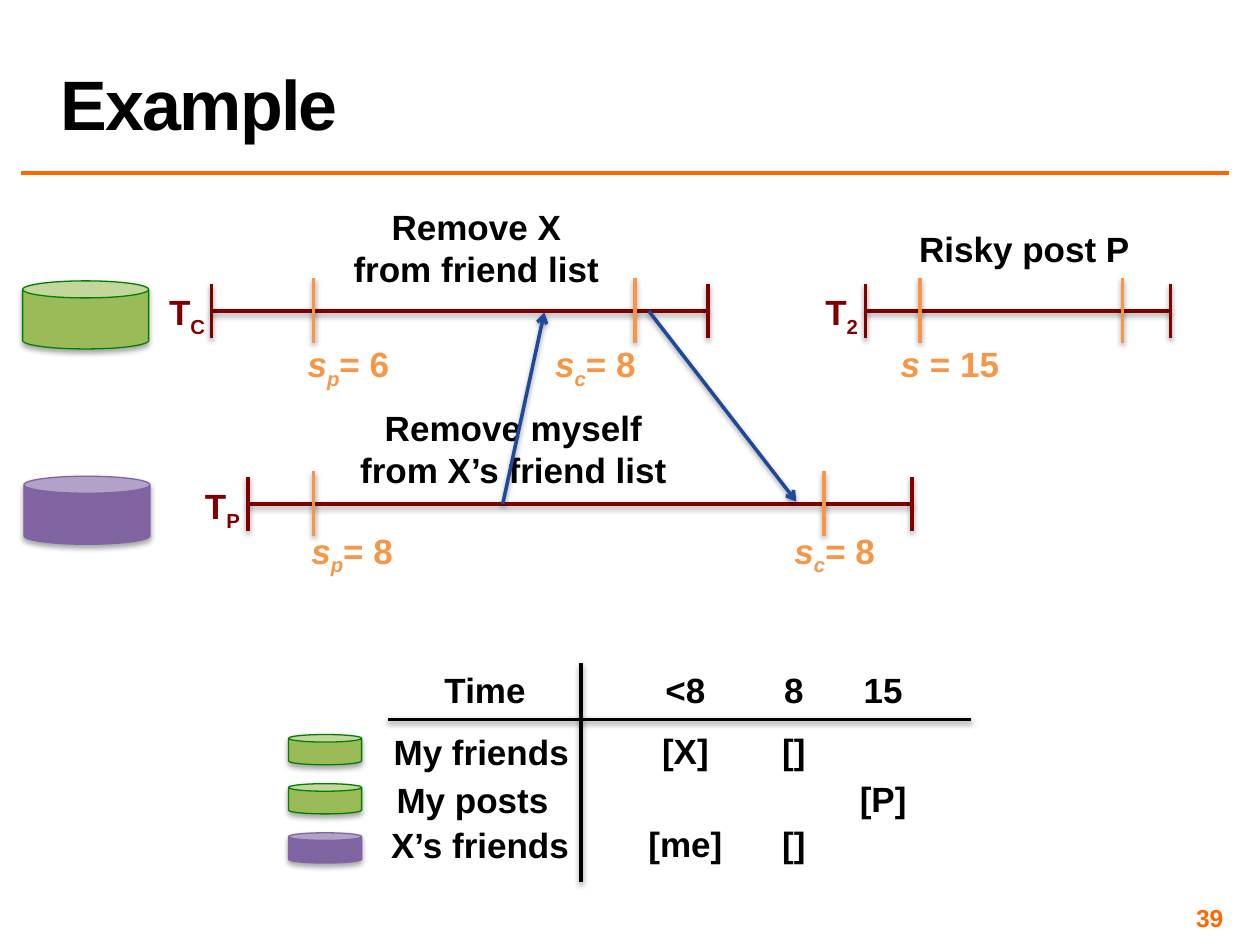
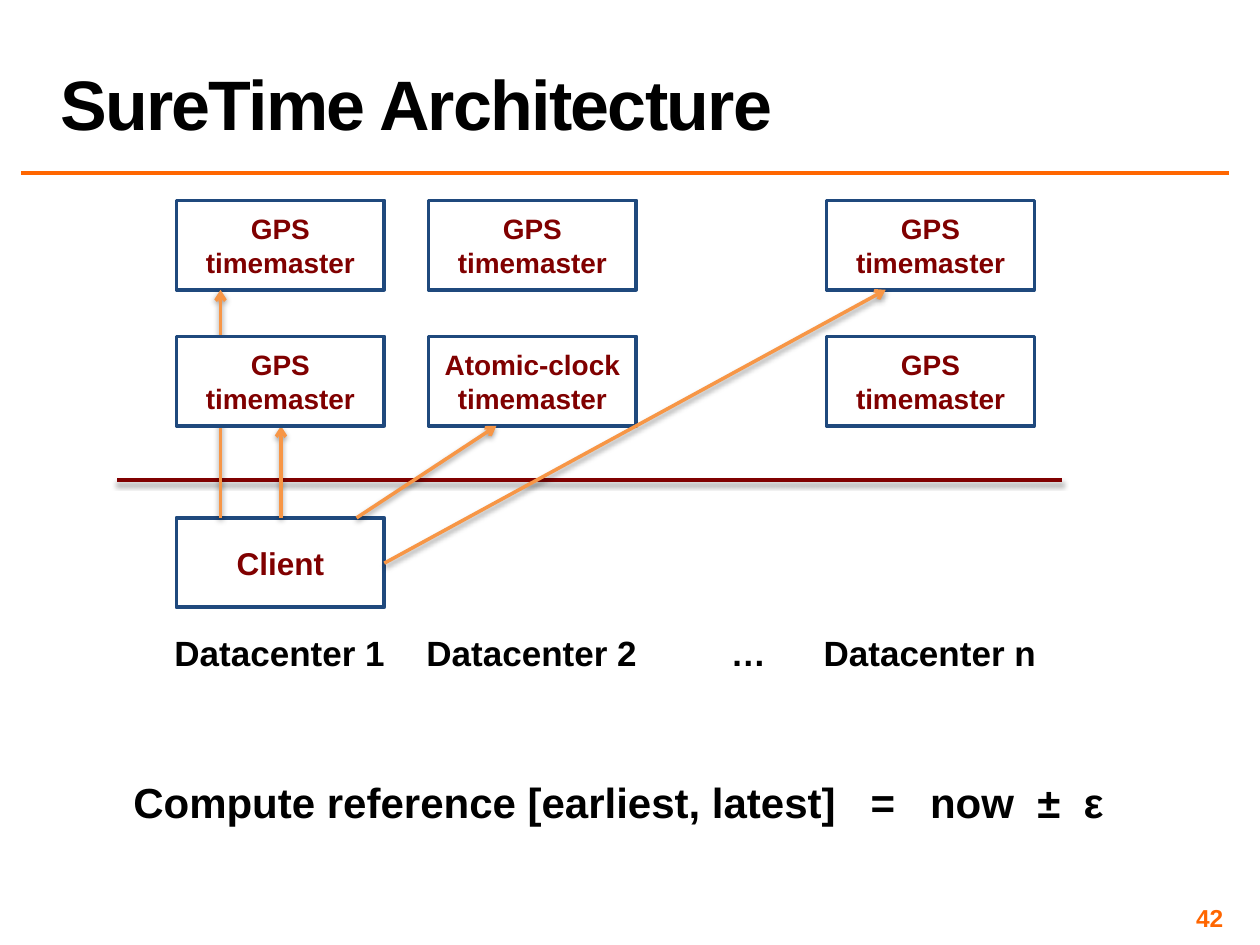
import pptx
import pptx.util
import pptx.dml.color
import pptx.enum.shapes
import pptx.enum.text
import pptx.oxml
import pptx.oxml.ns

ORANGE, AMBER, MAROON, BLACK = "FF6600", "F79646", "800000", "000000"
BLUE, NAVY, WHITE = "1E4899", "1F497D", "FFFFFF"
GREEN, EDGE, PURPLE = "9BBB59", "008000", "8064A2"
SHAPE = pptx.enum.shapes.MSO_SHAPE
ALIGN = pptx.enum.text.PP_ALIGN
ANCHOR = pptx.enum.text.MSO_ANCHOR


def grid(n):
    """Length of n cells; the slide is 100 columns by 75 rows."""
    return pptx.util.Inches(n / 10)


def color(code):
    return pptx.dml.color.RGBColor.from_string(code)


def xml(tag, inner="", **attrs):
    space = pptx.oxml.ns.nsdecls("a")
    pairs = " ".join(f'{key}="{val}"' for key, val in attrs.items())
    return pptx.oxml.parse_xml(f"<a:{tag} {space} {pairs}>{inner}</a:{tag}>")


class Deck:
    font = "Arial"
    stroke = 2

    def __init__(self):
        self.show = pptx.Presentation()
        self.show.slide_width, self.show.slide_height = grid(100), grid(75)
        self.slide = None

    def start(self, title, number):
        self.slide = self.show.slides.add_slide(self.show.slide_layouts[5])
        self.line(1.7, 13.73, 97.5, 13.73, ORANGE, shade=False)
        head = self.slide.shapes.title
        head.left, head.top, head.width, head.height = map(
            grid, (3.8, 0.2, 93.7, 11.7))
        frame = head.text_frame
        frame.text = title
        frame.vertical_anchor = ANCHOR.BOTTOM
        para = frame.paragraphs[0]
        self.style(para, 40, BLACK, ALIGN.LEFT)
        para.line_spacing = 0.8
        para.font._element.set("spc", "-100")
        foot = self.text(74.2, 71.7, 23.3, number, 14, ORANGE, high=2.3)
        foot.vertical_anchor = ANCHOR.MIDDLE
        foot.margin_left = foot.margin_right = grid(0.4)
        foot.margin_top = foot.margin_bottom = grid(0.4)
        foot.paragraphs[0].alignment = ALIGN.RIGHT
        foot.word_wrap = True

    def style(self, para, size, tint, align=ALIGN.CENTER):
        para.alignment = align
        font = para.font
        font.name, font.size, font.bold = self.font, pptx.util.Pt(size), True
        font.color.rgb = color(tint)

    def shade(self, shape, blur, dist, alpha):
        tone = f'<a:srgbClr val="000000"><a:alpha val="{alpha}"/></a:srgbClr>'
        cast = (f'<a:outerShdw blurRad="{blur}" dist="{dist}" dir="5400000" '
                f'rotWithShape="0">{tone}</a:outerShdw>')
        shape._element.spPr.append(xml("effectLst", cast))

    def line(self, x1, y1, x2, y2, tint, arrow=False, shade=True):
        link = self.slide.shapes.add_connector(
            pptx.enum.shapes.MSO_CONNECTOR.STRAIGHT,
            *map(grid, (x1, y1, x2, y2)))
        link.line.color.rgb = color(tint)
        link.line.width = pptx.util.Pt(self.stroke)
        if arrow:
            link.line._get_or_add_ln().append(xml("tailEnd", type="arrow"))
        if shade:
            self.shade(link, 40000, 20000, 38000)
        else:
            link._element.spPr.append(xml("effectLst"))

    def text(self, x, y, wide, words, size=20, tint=BLACK, high=4.4,
             wrap=False):
        """Words are a string, or (text, italic, lowered) runs."""
        area = self.slide.shapes.add_textbox(*map(grid, (x, y, wide, high)))
        frame = area.text_frame
        frame.word_wrap = wrap
        para = frame.paragraphs[0]
        self.style(para, size, tint)
        runs = [(words, False, False)] if isinstance(words, str) else words
        for part, slant, low in runs:
            run = para.add_run()
            run.text = part
            run.font.italic = slant
            if low:
                run.font._element.set("baseline", "-25000")
        return frame

    def shape(self, kind, x, y, wide, high, fill, edge, width):
        item = self.slide.shapes.add_shape(kind, *map(grid, (x, y, wide, high)))
        item.fill.solid()
        item.fill.fore_color.rgb = color(fill)
        item.line.color.rgb = color(edge)
        item.line.width = pptx.util.Pt(width)
        return item

    def can(self, x, y, wide, high, fill, edge):
        item = self.shape(SHAPE.CAN, x, y, wide, high, fill, edge, 0.75)
        self.shade(item, 40000, 23000, 35000)

    def box(self, x, y, words, size=16):
        item = self.shape(SHAPE.RECTANGLE, x, y, 16.5, 7.1, WHITE, NAVY,
                          self.stroke)
        item.shadow.inherit = False
        frame = item.text_frame
        frame.text = words
        frame.word_wrap = True
        frame.vertical_anchor = ANCHOR.MIDDLE
        self.style(frame.paragraphs[0], size, MAROON)

    def span(self, left, right, y, marks):
        """A time bar with end caps and amber marks."""
        self.line(left, y, right, y, MAROON)
        for x in (left, right):
            self.line(x, y - 2.15, x, y + 2.15, MAROON)
        for x in marks:
            self.line(x, y + 2.5, x, y - 2.6, AMBER)

    def name(self, x, y, wide, low):
        self.text(x, y, wide, [("T", False, False), (low, False, True)],
                  tint=MAROON)

    def stamp(self, x, y, low, value):
        self.text(x, y, 8.7, [("s", True, False), (low, True, True),
                              (f"= {value}", False, False)], tint=AMBER)


def example(deck):
    deck.start("Example", "39")
    client, peer = 24.7, 40
    deck.text(26.7, 15.8, 22.2, "Remove X from friend list", high=7.7,
              wrap=True)
    deck.text(27.6, 31.8, 26.3, "Remove myself from X’s friend list",
              high=7.7, wrap=True)
    deck.text(71.9, 17.6, 18.8, "Risky post P")
    for x, y, wide, low in ((11.8, 22.6, 6.1, "C"), (14.6, 38, 6.1, "P"),
                            (64.3, 22.6, 5, "2")):
        deck.name(x, y, wide, low)
    for x, y, low, value in ((23.3, 26.7, "p", 6), (42.9, 26.7, "c", 8),
                             (23.6, 41.5, "p", 8), (61.9, 41.5, "c", 8)):
        deck.stamp(x, y, low, value)
    deck.text(69.1, 26.7, 12.6, [("s ", True, False), ("= 15", False, False)],
              tint=AMBER)
    deck.span(16.8, 56.2, client, (24.9, 50.4))
    deck.span(68.7, 92.9, client, (73, 89.1))
    deck.span(19.7, 72.4, peer, (24.9, 65.4))
    deck.line(39.9, peer, 43.2, 24.8, BLUE, arrow=True)
    deck.line(51.5, client, 63.2, 39.8, BLUE, arrow=True)
    deck.can(1.8, 22.3, 10, 5.4, GREEN, EDGE)
    deck.can(1.9, 37.8, 10, 5.4, PURPLE, PURPLE)
    history(deck)


def history(deck):
    """The values of each list over time."""
    deck.line(30.8, 57.1, 77.1, 57.1, BLACK)
    deck.line(46.1, 52.6, 46.1, 70, BLACK)
    mids, wide = (38.5, 54.4, 63, 70.1), 10
    rows = ((52.6, ("Time", "<8", "8", "15")),
            (57.4, ("", "[X]", "[]", "")),
            (61.2, ("", "", "", "[P]")),
            (64.8, ("", "[me]", "[]", "")))
    for y, cells in rows:
        for mid, cell in zip(mids, cells):
            if cell:
                deck.text(mid - wide / 2, y, wide, cell)
    for x, y, size, label in ((30.2, 57.5, 16, "My friends"),
                              (30.4, 61.3, 14.2, "My posts"),
                              (30, 64.9, 16.2, "X’s friends")):
        deck.text(x, y, size, label)
    for step, (fill, edge) in enumerate(
            ((GREEN, EDGE), (GREEN, EDGE), (PURPLE, PURPLE))):
        deck.can(22.9, 58.3 + 3.9 * step, 5.8, 2.4, fill, edge)


def clocks(deck):
    deck.start("SureTime Architecture", "42")
    cols, upper, lower, base = (14, 34, 65.6), 15.9, 26.7, 41.1
    gps = "GPS timemaster"
    for x, word in zip((12.2, 32.2, 63.8), "12n"):
        deck.text(x, 49.6, 20, f"Datacenter {word}")
    deck.text(57, 49.6, 4.8, "…")
    for x in cols:
        deck.box(x, upper, gps)
    deck.box(cols[1], lower, "Atomic-clock timemaster")
    deck.box(cols[2], lower, gps)
    deck.box(cols[0], base, "Client", 18)
    deck.line(9.3, 38.1, 84.3, 38.1, MAROON)
    for ends in ((28.3, base, 39.4, 33.8), (30.5, 44.7, 70.3, 23),
                 (22.3, base, 22.3, 33.8), (17.5, base, 17.5, 23)):
        deck.line(*ends, AMBER, arrow=True)
    deck.box(cols[0], lower, gps)
    deck.text(9.2, 61.1, 79.8,
              "Compute reference [earliest, latest]   =   now  ±  ε", 24,
              high=5)


def main():
    deck = Deck()
    example(deck)
    clocks(deck)
    deck.show.save("out.pptx")


if __name__ == "__main__":
    main()
